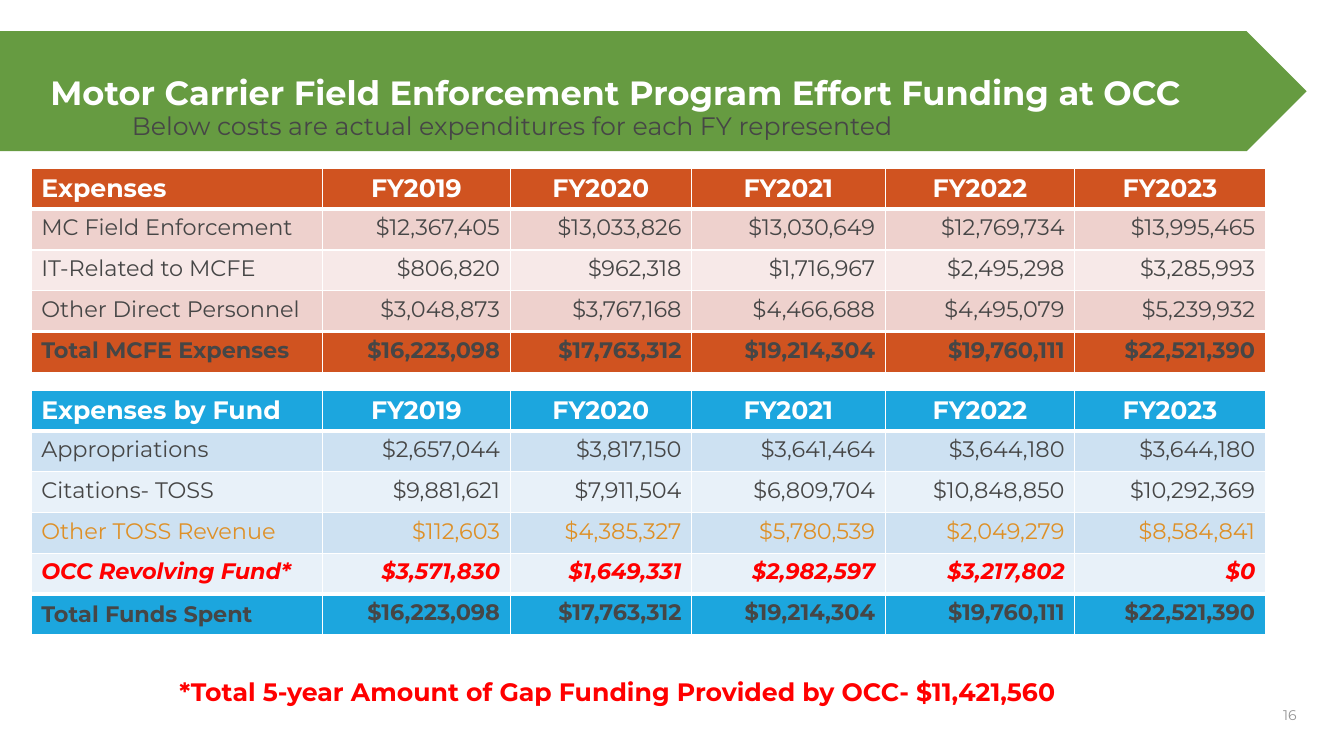
from lxml import etree
from pptx import Presentation
from pptx.dml.color import RGBColor
from pptx.enum.shapes import MSO_SHAPE
from pptx.enum.text import MSO_ANCHOR as ANCHOR, PP_ALIGN as ALIGN
from pptx.oxml.ns import qn
from pptx.util import Inches, Pt

FONT = "Montserrat"
COLORS = {
    "white": "FFFFFF", "green": "669B41", "text": "464646", "gray": "949494",
    "red": "FF0000", "gold": "DE9027",
    "orange": "D05320", "orange_mid": "EED1CD", "orange_light": "F7E9E8",
    "blue": "1CA6DE", "blue_mid": "CDE1F2", "blue_light": "E8F1F9",
}
YEARS = ["FY2019", "FY2020", "FY2021", "FY2022", "FY2023"]
TOTALS = ["$16,223,098", "$17,763,312", "$19,214,304", "$19,760,111", "$22,521,390"]
EXPENSES = [
    ["Expenses", *YEARS],
    ["MC Field Enforcement", "$12,367,405", "$13,033,826", "$13,030,649", "$12,769,734", "$13,995,465"],
    ["IT-Related to MCFE", "$806,820", "$962,318", "$1,716,967", "$2,495,298", "$3,285,993"],
    ["Other Direct Personnel", "$3,048,873", "$3,767,168", "$4,466,688", "$4,495,079", "$5,239,932"],
    ["Total MCFE Expenses", *TOTALS],
]
FUNDS = [
    ["Expenses by Fund", *YEARS],
    ["Appropriations", "$2,657,044", "$3,817,150", "$3,641,464", "$3,644,180", "$3,644,180"],
    ["Citations- TOSS", "$9,881,621", "$7,911,504", "$6,809,704", "$10,848,850", "$10,292,369"],
    ["Other TOSS Revenue", "$112,603", "$4,385,327", "$5,780,539", "$2,049,279", "$8,584,841"],
    ["OCC Revolving Fund*", "$3,571,830", "$1,649,331", "$2,982,597", "$3,217,802", "$0"],
    ["Total Funds Spent", *TOTALS],
]
COL_WIDTHS = [2.89, 1.86, 1.8, 1.92, 1.88, 1.89]
ROW_HEIGHT = 0.405
ROW_STYLES = {
    "Other TOSS Revenue": ("gold", False, False),
    "OCC Revolving Fund*": ("red", True, True),
}


def rgb(name):
    """Return the named colour."""
    return RGBColor.from_string(COLORS[name])


def write(tf, text, size, color, bold=False, italic=False, align=ALIGN.LEFT):
    """Put one formatted paragraph in a text frame."""
    tf.text = text
    p = tf.paragraphs[0]
    p.alignment = align
    font = p.font
    font.name, font.size, font.bold, font.italic = FONT, Pt(size), bold, italic
    font.color.rgb = rgb(color)


def place(sp, left, top, width, height):
    """Set a shape's position and size."""
    sp.left, sp.top = Inches(left), Inches(top)
    sp.width, sp.height = Inches(width), Inches(height)


def add_title(s, text):
    """Fill the title placeholder and lay the green banner behind it."""
    title = s.shapes.title
    place(title, 0.5, 0.45, 12.46, 0.92)
    tf = title.text_frame
    tf.word_wrap = True
    tf.margin_left = 0
    tf.vertical_anchor = ANCHOR.MIDDLE
    write(tf, text, 24, "white", bold=True)
    banner = s.shapes.add_shape(MSO_SHAPE.PENTAGON, 0, Inches(0.31), Inches(12.96), Inches(1.19))
    banner.shadow.inherit = False
    banner.fill.solid()
    banner.fill.fore_color.rgb = rgb("green")
    banner.line.fill.background()
    title.element.addprevious(banner.element)


def add_text(s, box, text, size, color, anchor=ANCHOR.TOP, **style):
    """Add a wrapping text box."""
    tf = s.shapes.add_textbox(*map(Inches, box)).text_frame
    tf.word_wrap = True
    tf.vertical_anchor = anchor
    write(tf, text, size, color, **style)


def set_borders(cell, top, bottom):
    """Draw white cell borders, with the given top and bottom widths in points."""
    tc_pr = cell._tc.get_or_add_tcPr()
    for i, (side, width) in enumerate([("L", 1), ("R", 1), ("T", top), ("B", bottom)]):
        ln = etree.Element(qn(f"a:ln{side}"), w=str(Pt(width)))
        fill = etree.SubElement(ln, qn("a:solidFill"))
        etree.SubElement(fill, qn("a:srgbClr"), val=COLORS["white"])
        tc_pr.insert(i, ln)


def add_money_table(s, top, rows, hue):
    """Add a table with a header, banded rows and a total row."""
    last = len(rows) - 1
    frame = s.shapes.add_table(len(rows), len(COL_WIDTHS), Inches(0.31), Inches(top),
                               Inches(sum(COL_WIDTHS)), Inches(ROW_HEIGHT * len(rows)))
    table = frame.table
    for column, width in zip(table.columns, COL_WIDTHS):
        column.width = Inches(width)
    for r, values in enumerate(rows):
        table.rows[r].height = Inches(ROW_HEIGHT)
        color, bold, italic = ROW_STYLES.get(values[0], ("text", r == last, False))
        size, number_align = 16, ALIGN.RIGHT
        fill = f"{hue}_mid" if r % 2 else f"{hue}_light"
        if r in (0, last):
            fill = hue
        if r == 0:
            size, color, bold, number_align = 18, "white", True, ALIGN.CENTER
        for c, value in enumerate(values):
            cell = table.cell(r, c)
            cell.fill.solid()
            cell.fill.fore_color.rgb = rgb(fill)
            write(cell.text_frame, value, size, color, bold, italic,
                  number_align if c else ALIGN.LEFT)
            set_borders(cell, 3 if r in (1, last) else 1, 3 if r in (0, last - 1) else 1)
    return table


def main():
    """Build the funding slide."""
    prs = Presentation()
    prs.slide_width, prs.slide_height = Inches(13.33), Inches(7.5)
    s = prs.slides.add_slide(prs.slide_layouts[5])
    add_title(s, "Motor Carrier Field Enforcement Program Effort Funding at OCC")
    add_text(s, (9.96, 6.98, 3, 0.22), "16", 10, "gray", ANCHOR.MIDDLE, align=ALIGN.RIGHT)
    funds = add_money_table(s, 3.87, FUNDS, "blue")
    funds.cell(len(FUNDS) - 1, 0).vertical_anchor = ANCHOR.MIDDLE
    add_money_table(s, 1.67, EXPENSES, "orange")
    add_text(s, (1.21, 1.05, 8.84, 0.4),
             "Below costs are actual expenditures for each FY represented", 18, "text")
    add_text(s, (1.68, 6.66, 10.51, 0.4),
             "*Total 5-year Amount of Gap Funding Provided by OCC- $11,421,560", 18, "red", bold=True)
    prs.save("out.pptx")


if __name__ == "__main__":
    main()
